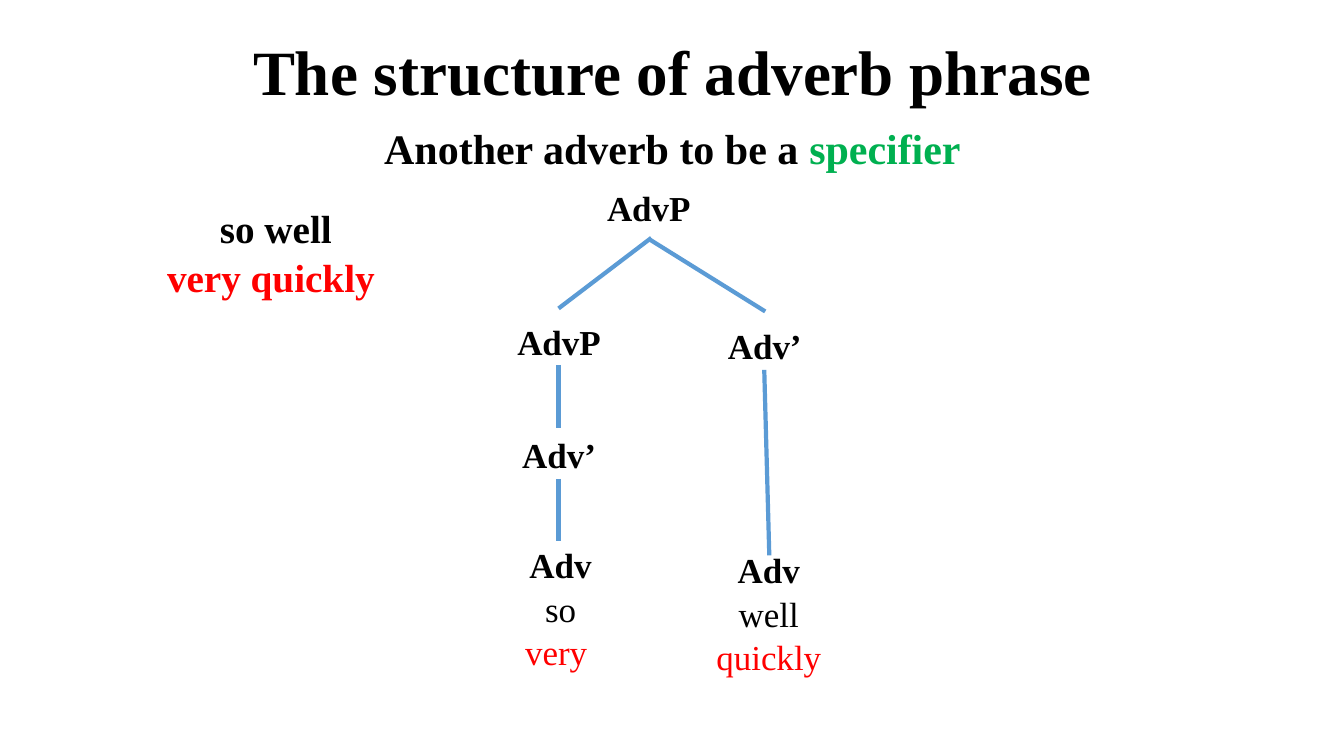
from lxml.etree import SubElement
from pptx import Presentation
from pptx.dml.color import RGBColor
from pptx.enum.shapes import MSO_CONNECTOR, MSO_SHAPE
from pptx.enum.text import MSO_ANCHOR, MSO_AUTO_SIZE, PP_ALIGN
from pptx.oxml.ns import qn
from pptx.util import Pt

PX = 9144
FONT = "Times New Roman"
BLACK = RGBColor(0x00, 0x00, 0x00)
WHITE = RGBColor(0xFF, 0xFF, 0xFF)
RED = RGBColor(0xFF, 0x00, 0x00)
GREEN = RGBColor(0x00, 0xB0, 0x50)
BLUE = RGBColor(0x5B, 0x9B, 0xD5)


def emu(*lengths):
    return [length * PX for length in lengths]


def place(part, box):
    part.left, part.top, part.width, part.height = emu(*box)


def write(paragraph, text, size=25, color=BLACK, bold=True, spacing=1.0, before=0):
    paragraph.alignment = PP_ALIGN.CENTER
    paragraph.line_spacing = spacing
    paragraph.space_before = Pt(before)
    run = paragraph.add_run()
    run.text = text
    run.font.name = FONT
    run.font.size = Pt(size)
    run.font.bold = bold
    run.font.color.rgb = color


def frame_of(part, anchor=MSO_ANCHOR.MIDDLE):
    frame = part.text_frame
    frame.word_wrap = True
    frame.auto_size = MSO_AUTO_SIZE.NONE
    frame.vertical_anchor = anchor
    return frame


def add_heading(slide, box):
    left, top, width, height = box
    title, subtitle = slide.placeholders
    place(title, (left, top, width, 70))
    write(frame_of(title).paragraphs[0], "The structure of adverb phrase", size=45, spacing=0.9)

    place(subtitle, (left, top + 82, width, height - 82))
    line = frame_of(subtitle, MSO_ANCHOR.TOP).paragraphs[0]
    for text, color in (("Another adverb to be a ", BLACK), ("specifier", GREEN)):
        write(line, text, size=30, color=color, spacing=0.9, before=10)
    properties = line._p.get_or_add_pPr()
    properties.set("marL", "0")
    properties.set("indent", "0")
    SubElement(properties, qn("a:buNone"))


def add_examples(slide, box):
    examples = slide.shapes.add_shape(MSO_SHAPE.RECTANGLE, *emu(*box))
    examples.shadow.inherit = False
    examples.fill.solid()
    examples.fill.fore_color.rgb = WHITE
    examples.line.fill.background()
    frame = frame_of(examples)
    write(frame.paragraphs[0], "so well", size=28, spacing=1.04)
    write(frame.add_paragraph(), "very quickly ", size=28, color=RED, spacing=1.04)


def add_node(slide, box, category, word=None, other_word=None):
    frame = frame_of(slide.shapes.add_textbox(*emu(*box)))
    write(frame.paragraphs[0], category, spacing=1.04)
    if word:
        write(frame.add_paragraph(), word, bold=False, spacing=1.04)
        write(frame.add_paragraph(), other_word, color=RED, bold=False, spacing=1.04)


def add_branch(slide, start, end):
    branch = slide.shapes.add_connector(MSO_CONNECTOR.STRAIGHT, *emu(*start, *end))
    branch.line.color.rgb = BLUE
    branch.line.width = Pt(3)
    SubElement(branch._element.spPr, qn("a:effectLst"))


def add_tree(slide, box):
    left, top = box[:2]
    nodes = (
        ((101, 0, 103, 51), "AdvP"),
        ((9, 132, 107, 51), "AdvP "),
        ((219, 136, 97, 51), "Adv’"),
        ((15, 245, 97, 51), "Adv’"),
        ((0, 368, 130, 109), "Adv", "so", "very "),
        ((199, 371, 145, 113), "Adv", "well", "quickly"),
    )
    branches = (
        ((154, 58), (268, 129)),
        ((155, 56), (63, 126)),
        ((63, 182), (63, 245)),
        ((63, 295), (63, 357)),
        ((267, 187), (272, 371)),
    )
    for (x, y, width, height), *words in nodes:
        add_node(slide, (left + x, top + y, width, height), *words)
    for ends in branches:
        add_branch(slide, *[(left + x, top + y) for x, y in ends])


def main():
    deck = Presentation()
    deck.slide_width, deck.slide_height = emu(1333, 750)
    slide = deck.slides.add_slide(deck.slide_layouts[1])
    add_heading(slide, (92, 40, 1150, 651))
    add_examples(slide, (154, 205, 239, 88))
    add_tree(slide, (491, 180, 344, 484))
    deck.save("out.pptx")


if __name__ == "__main__":
    main()
